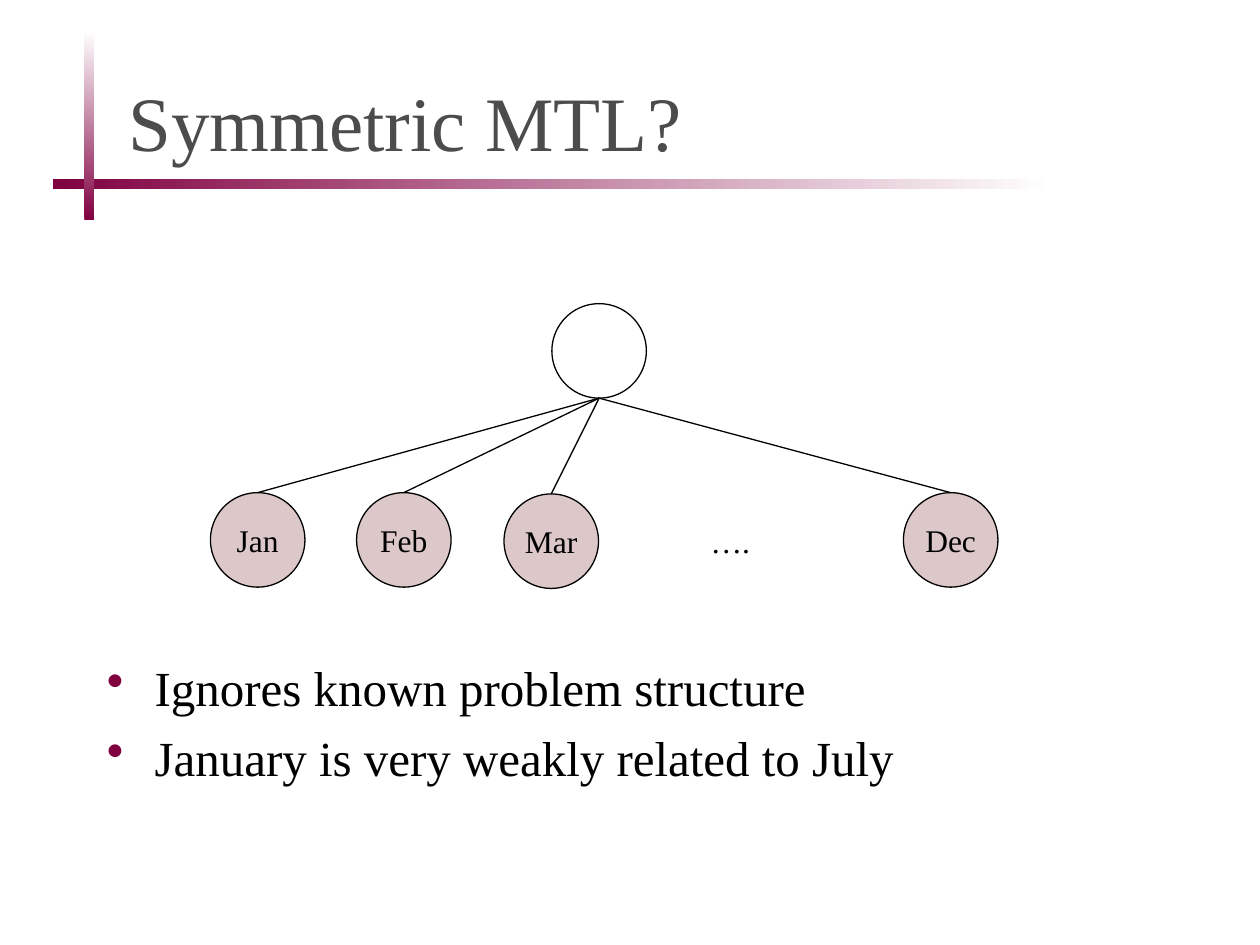
"""Build the slide on symmetric multitask learning over months."""
from dataclasses import dataclass

from lxml.etree import SubElement
from pptx import Presentation
from pptx.dml.color import RGBColor
from pptx.enum.shapes import MSO_CONNECTOR, MSO_SHAPE
from pptx.enum.text import MSO_ANCHOR as Anchor, PP_ALIGN as Align
from pptx.oxml.ns import qn
from pptx.shapes.autoshape import Shape
from pptx.slide import Slide
from pptx.text.text import _Paragraph as Paragraph
from pptx.util import Inches, Pt

FONT = "Times New Roman"
WINE = RGBColor(0x80, 0x00, 0x40)
WHITE = RGBColor(0xFF, 0xFF, 0xFF)
GRAY = RGBColor(0x4C, 0x4C, 0x4C)
ROSE = RGBColor(0xDC, 0xC8, 0xC8)
BLACK = RGBColor(0x00, 0x00, 0x00)
DIAMETER = 0.75
LINE_WIDTH = Pt(0.75)


@dataclass(frozen=True)
class Area:
    left: float
    top: float
    width: float
    height: float

    def lengths(self) -> tuple[Inches, ...]:
        return tuple(Inches(v) for v in (self.left, self.top, self.width, self.height))


@dataclass(frozen=True)
class Bar:
    area: Area
    angle: int


@dataclass(frozen=True)
class Month:
    name: str
    left: float
    top: float = 3.91


BARS = (Bar(Area(0.42, 1.42, 7.92, 0.08), 0), Bar(Area(0.67, 0.25, 0.08, 1.5), 90))
MONTHS = (Month("Jan", 1.67), Month("Feb", 2.83), Month("Mar", 4, 3.92), Month("Dec", 7.17))
ROOT = Area(4.38, 2.41, DIAMETER, DIAMETER)
BULLETS = ("Ignores known problem structure", "January is very weakly related to July")


def add_span(para: Paragraph, text: str, size: int, color: RGBColor = BLACK) -> None:
    span = para.add_run()
    span.text = text
    span.font.name = FONT
    span.font.size = Pt(size)
    span.font.color.rgb = color


def add_box(page: Slide, area: Area, anchor: Anchor = Anchor.TOP) -> Shape:
    box = page.shapes.add_textbox(*area.lengths())
    box.text_frame.word_wrap = True
    box.text_frame.vertical_anchor = anchor
    return box


def add_bar(page: Slide, bar: Bar) -> None:
    shape = page.shapes.add_shape(MSO_SHAPE.RECTANGLE, *bar.area.lengths())
    shape.shadow.inherit = False
    shape.line.fill.background()
    shape.fill.gradient()
    shape.fill.gradient_angle = bar.angle
    for stop, color in zip(shape.fill.gradient_stops, (WINE, WHITE)):
        stop.color.rgb = color


def add_circle(page: Slide, area: Area) -> Shape:
    circle = page.shapes.add_shape(MSO_SHAPE.OVAL, *area.lengths())
    circle.shadow.inherit = False
    circle.fill.background()
    circle.line.color.rgb = BLACK
    circle.line.width = LINE_WIDTH
    return circle


def add_month(page: Slide, month: Month) -> Shape:
    circle = add_circle(page, Area(month.left, month.top, DIAMETER, DIAMETER))
    circle.fill.solid()
    circle.fill.fore_color.rgb = ROSE
    frame = circle.text_frame
    frame.word_wrap = False
    frame.vertical_anchor = Anchor.MIDDLE
    para = frame.paragraphs[0]
    para.alignment = Align.CENTER
    add_span(para, month.name, 18)
    return circle


def add_branch(page: Slide, root: Shape, leaf: Shape) -> None:
    branch = page.shapes.add_connector(
        MSO_CONNECTOR.STRAIGHT,
        root.left + root.width // 2, root.top + root.height,
        leaf.left + leaf.width // 2, leaf.top,
    )
    branch.end_connect(leaf, 0)
    branch.line.color.rgb = BLACK
    branch.line.width = LINE_WIDTH
    SubElement(branch._element.spPr, qn("a:effectLst"))


def add_bullet(para: Paragraph, text: str) -> None:
    para.space_before = Pt(6.4)
    properties = para._p.get_or_add_pPr()
    properties.set("marL", str(Inches(0.38)))
    properties.set("indent", str(Inches(-0.38)))
    color = SubElement(properties, qn("a:buClr"))
    SubElement(color, qn("a:srgbClr"), val=str(WINE))
    SubElement(properties, qn("a:buChar"), char="•")
    add_span(para, text, 28)


def main() -> None:
    deck = Presentation()
    deck.slide_width, deck.slide_height = Inches(10), Inches(7.5)
    page = deck.slides.add_slide(deck.slide_layouts[6])

    for bar in BARS:
        add_bar(page, bar)
    title = add_box(page, Area(0.92, 0.33, 8.33, 1.25), Anchor.MIDDLE)
    add_span(title.text_frame.paragraphs[0], "Symmetric MTL?", 44, GRAY)

    leaves = [add_month(page, month) for month in MONTHS]
    ellipsis = add_box(page, Area(5.42, 4.09, 0.75, 0.4)).text_frame.paragraphs[0]
    ellipsis.alignment = Align.CENTER
    add_span(ellipsis, "….", 18)
    root = add_circle(page, ROOT)
    for leaf in leaves:
        add_branch(page, root, leaf)

    frame = add_box(page, Area(0.75, 5.17, 8.5, 1.75)).text_frame
    for index, text in enumerate(BULLETS):
        add_bullet(frame.add_paragraph() if index else frame.paragraphs[0], text)
    deck.save("out.pptx")


if __name__ == "__main__":
    main()
